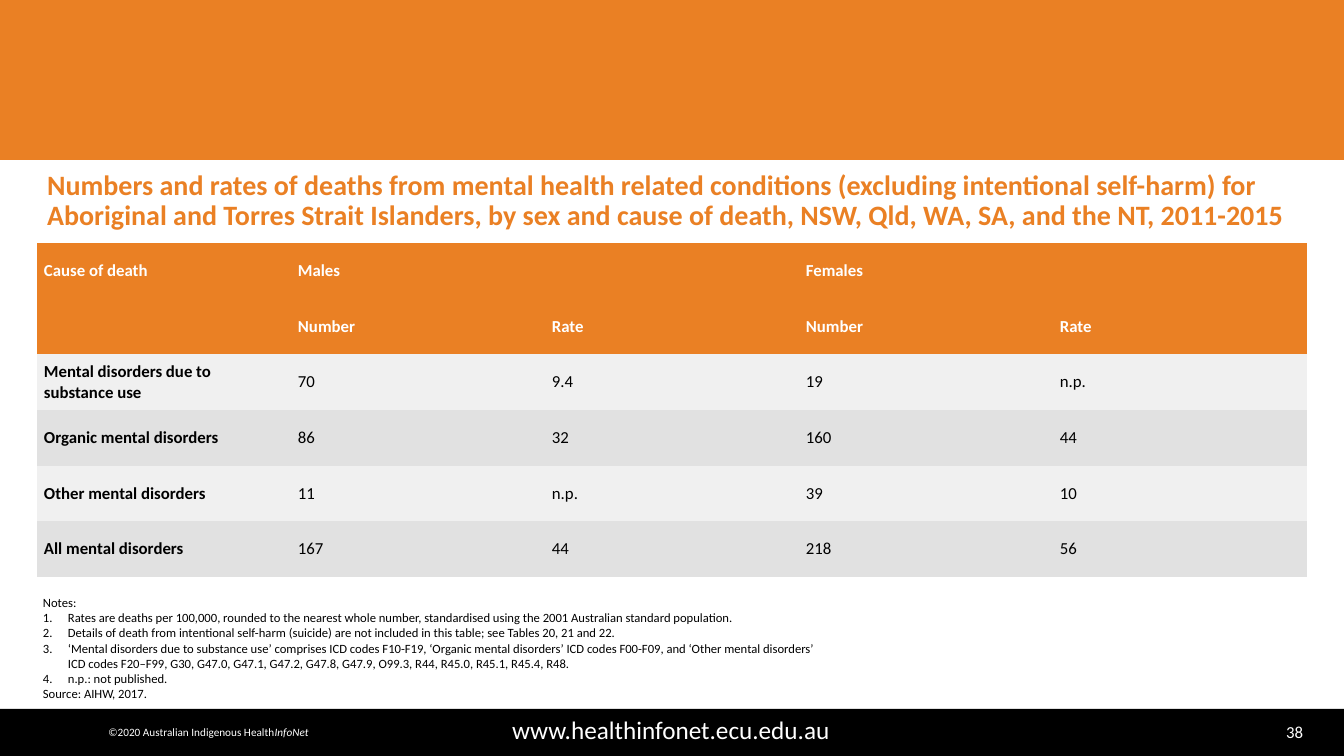
from lxml.etree import SubElement as Sub
from pptx import Presentation
from pptx.dml.color import RGBColor as RGB
from pptx.enum.shapes import MSO_SHAPE as Kind
from pptx.enum.text import MSO_ANCHOR as Anchor, MSO_AUTO_SIZE as Fit, PP_ALIGN as Align
from pptx.oxml.ns import qn
from pptx.util import Pt

ORANGE, BLACK, WHITE = "EA8024", "000000", "FFFFFF"
BANDS = ["F0F0F0", "E1E1E1"]
PLAIN = "{2D5ABB26-0587-4C30-8999-92F81FD0307C}"

TITLE = ("Numbers and rates of deaths from mental health related conditions "
         "(excluding intentional self-harm) for Aboriginal and Torres Strait Islanders, "
         "by sex and cause of death, NSW, Qld, WA, SA, and the NT, 2011-2015")
ROWS = [
    ["Cause of death", "Males", "", "Females", ""],
    ["", "Number", "Rate", "Number", "Rate"],
    ["Mental disorders due to substance use", "70", "9.4", "19", "n.p."],
    ["Organic mental disorders", "86", "32", "160", "44"],
    ["Other mental disorders", "11", "n.p.", "39", "10"],
    ["All mental disorders", "167", "44", "218", "56"],
]
NOTES = [
    "Rates are deaths per 100,000, rounded to the nearest whole number, "
    "standardised using the 2001 Australian standard population.",
    "Details of death from intentional self-harm (suicide) are not included in this table; "
    "see Tables 20, 21 and 22.",
    "‘Mental disorders due to substance use’ comprises ICD codes F10-F19, "
    "‘Organic mental disorders’ ICD codes F00-F09, and ‘Other mental disorders’ "
    "ICD codes F20–F99, G30, G47.0, G47.1, G47.2, G47.8, G47.9, O99.3, R44, R45.0, "
    "R45.1, R45.4, R48.",
    "n.p.: not published.",
]
SOURCE = "Source: AIHW, 2017."
BARS = [((-3, 0, 1347, 160), ORANGE), ((0, 709, 1344, 47), BLACK)]
FOOT = [
    ((1205, 717, 108, 30), ["38"], 12, Align.RIGHT, True),
    ((62, 709, 1218, 39), ["www.healthinfonet.ecu.edu.au"], 18, Align.CENTER, True),
    ((93, 720, 231, 24), ["©2020 Australian Indigenous Health", "InfoNet"], 8, Align.CENTER, False),
]


def px(n):
    return round(n * 914400 / 100.8)


def box(vals):
    return [px(v) for v in vals]


def color(code):
    return RGB.from_string(code)


def paint(part, code):
    part.fill.solid()
    part.fill.fore_color.rgb = color(code)


def write(para, text, size, code, bold=False, slant=False):
    run = para.add_run()
    run.text = text
    font = run.font
    font.name, font.size, font.bold, font.italic = "Calibri", Pt(size), bold, slant
    font.color.rgb = color(code)


def number(para):
    props = para._p.get_or_add_pPr()
    props.set("marL", str(px(25)))
    props.set("indent", str(-px(25)))
    Sub(props, qn("a:buFont"), typeface="+mj-lt")
    Sub(props, qn("a:buAutoNum"), type="arabicPeriod")


deck = Presentation()
deck.slide_width, deck.slide_height = px(1344), px(756)
slide = deck.slides.add_slide(deck.slide_layouts[5])
shapes = slide.shapes

title = shapes.title
title.left, title.top, title.width, title.height = box((37, 166, 1270, 85))
frame = title.text_frame
frame.word_wrap, frame.auto_size = True, Fit.NONE
frame.vertical_anchor = Anchor.TOP
para = frame.paragraphs[0]
para.alignment, para.line_spacing = Align.LEFT, 0.9
write(para, TITLE, 20, ORANGE, True)

for place, code in BARS:
    bar = shapes.add_shape(Kind.RECTANGLE, *box(place))
    bar.shadow.inherit = False
    paint(bar, code)
    bar.line.fill.background()

for place, texts, size, align, wrap in FOOT:
    frame = shapes.add_textbox(*box(place)).text_frame
    frame.word_wrap = wrap
    para = frame.paragraphs[0]
    para.alignment = align
    for i, text in enumerate(texts):
        write(para, text, size, WHITE, slant=i > 0)

table = shapes.add_table(len(ROWS), len(ROWS[0]), *box((37, 243, 1270, 334))).table
table._tbl.tblPr.find(qn("a:tableStyleId")).text = PLAIN
for r, row in enumerate(ROWS):
    head = r < 2
    for c, text in enumerate(row):
        cell = table.cell(r, c)
        paint(cell, ORANGE if head else BANDS[r % 2])
        cell.vertical_anchor = Anchor.MIDDLE
        cell.margin_left = cell.margin_right = px(7)
        cell.margin_top = cell.margin_bottom = 0
        if text:
            para = cell.text_frame.paragraphs[0]
            para.space_after = Pt(5)
            write(para, text, 12, WHITE if head else BLACK, head or c == 0)
for c in (1, 3):
    table.cell(0, c).merge(table.cell(0, c + 1))

frame = shapes.add_textbox(*box((33, 590, 805, 125))).text_frame
frame.word_wrap = True
write(frame.paragraphs[0], "Notes:", 9, BLACK)
for note in NOTES:
    para = frame.add_paragraph()
    number(para)
    write(para, note, 9, BLACK)
para = frame.add_paragraph()
para.space_after = Pt(3)
write(para, SOURCE, 9, BLACK)

deck.save("out.pptx")
